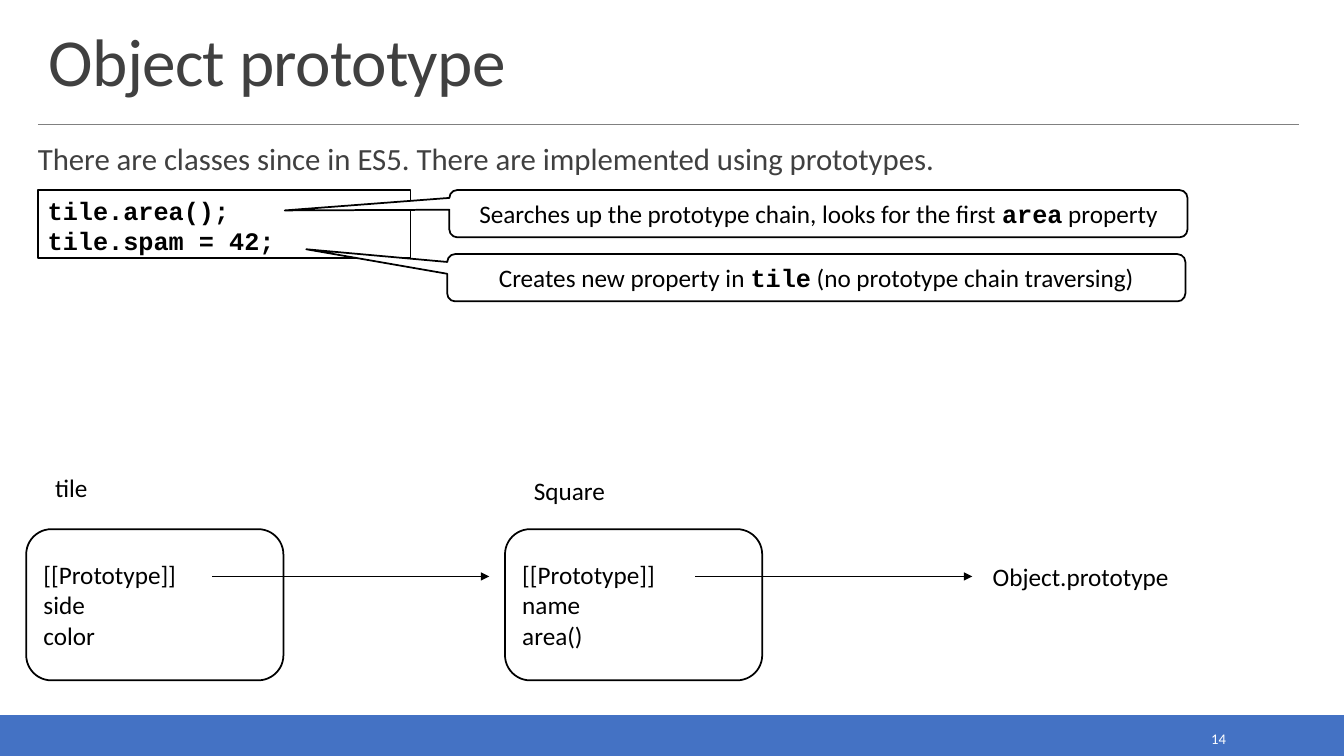
import dataclasses

import pptx
import pptx.dml.color
import pptx.enum.shapes
import pptx.enum.text
import pptx.oxml.ns
import pptx.util
from lxml import etree

PX = 9525  # EMU in one px, 96 px to the inch
SHAPES = pptx.enum.shapes.MSO_SHAPE
ALIGN = pptx.enum.text.PP_ALIGN
ANCHOR = pptx.enum.text.MSO_ANCHOR


@dataclasses.dataclass(frozen=True)
class Theme:
    accent: str = "4472C4"
    rule: str = "808080"
    heading: str = "404040"
    ink: str = "000000"
    paper: str = "FFFFFF"
    font: str = "Calibri"
    code_font: str = "Courier New"
    title_size: float = 48
    body_size: float = 22
    text_size: float = 18
    number_size: float = 10.5
    outline: float = 1.25
    arrow: float = 1
    hairline: float = 0.5


THEME = Theme()


def px(*lengths):
    return [pptx.util.Emu(length * PX) for length in lengths]


def rgb(color):
    return pptx.dml.color.RGBColor.from_string(color)


def write(frame, text, size=THEME.text_size, color=THEME.ink, align=ALIGN.LEFT,
          anchor=ANCHOR.TOP, line_spacing=None, before=None, after=None, tracking=None):
    """Write one paragraph per line of text; `backticks` mark bold code."""
    frame.word_wrap = True
    frame.auto_size = pptx.enum.text.MSO_AUTO_SIZE.NONE
    frame.vertical_anchor = anchor
    for index, line in enumerate(text.split("\n")):
        paragraph = frame.add_paragraph() if index else frame.paragraphs[0]
        paragraph.alignment = align
        paragraph.line_spacing = line_spacing
        if before is not None:
            paragraph.space_before = pptx.util.Pt(before)
        if after is not None:
            paragraph.space_after = pptx.util.Pt(after)
        for position, piece in enumerate(line.split("`")):
            if not piece:
                continue
            is_code = position % 2 == 1
            run = paragraph.add_run()
            run.text = piece
            run.font.name = THEME.code_font if is_code else THEME.font
            run.font.bold = is_code
            run.font.size = pptx.util.Pt(size)
            run.font.color.rgb = rgb(color)
            if tracking is not None:
                run.font._element.set("spc", str(round(tracking * 100)))


def place(placeholder, *box):
    placeholder.left, placeholder.top, placeholder.width, placeholder.height = px(*box)


def add_title(slide, text):
    title = slide.shapes.title
    place(title, 37, 19, 1202, 81)
    write(title.text_frame, text, size=THEME.title_size, color=THEME.heading,
          anchor=ANCHOR.BOTTOM, line_spacing=0.85, tracking=-0.5)


def add_statement(slide, text):
    """Fill the body placeholder with plain text without a bullet."""
    body = slide.placeholders[1]
    place(body, 36, 133, 1202, 45)
    frame = body.text_frame
    frame.margin_left, frame.margin_top, frame.margin_right, frame.margin_bottom = px(0, 4, 0, 4)
    write(frame, text, size=THEME.body_size, color=THEME.heading,
          line_spacing=0.9, before=12, after=2)
    properties = frame.paragraphs[0]._p.get_or_add_pPr()
    properties.set("marL", "0")
    properties.set("indent", "0")
    etree.SubElement(properties, pptx.oxml.ns.qn("a:buNone"))


def add_box(slide, preset, box, fill=THEME.paper, line=THEME.ink, adjustments=()):
    shape = slide.shapes.add_shape(preset, *px(*box))
    shape.shadow.inherit = False
    if fill:
        shape.fill.solid()
        shape.fill.fore_color.rgb = rgb(fill)
    else:
        shape.fill.background()
    shape.line.color.rgb = rgb(line)
    shape.line.width = pptx.util.Pt(THEME.outline)
    for index, value in enumerate(adjustments):
        shape.adjustments[index] = value
    return shape


def add_callout(slide, left, top, pointer, text):
    callout = add_box(slide, SHAPES.ROUNDED_RECTANGULAR_CALLOUT, (left, top, 703, 45),
                      adjustments=(*pointer, 0.167))
    write(callout.text_frame, text, align=ALIGN.CENTER, anchor=ANCHOR.MIDDLE)


def add_label(slide, box, text, **text_format):
    label = slide.shapes.add_textbox(*px(*box))
    write(label.text_frame, text, **text_format)


def add_line(slide, start, end, color, width, arrowhead=False):
    line = slide.shapes.add_connector(pptx.enum.shapes.MSO_CONNECTOR.STRAIGHT, *px(*start, *end))
    line.line.color.rgb = rgb(color)
    line.line.width = pptx.util.Pt(width)
    if arrowhead:
        etree.SubElement(line.line._get_or_add_ln(), pptx.oxml.ns.qn("a:tailEnd"), type="triangle")
    etree.SubElement(line._element.spPr, pptx.oxml.ns.qn("a:effectLst"))


def add_object(slide, left, name, name_top, members):
    """Draw a named object whose prototype arrow leads to the right."""
    holder = add_box(slide, SHAPES.ROUNDED_RECTANGLE, (left, 504, 245, 144))
    write(holder.text_frame, "\n".join(["[[Prototype]]", *members]), anchor=ANCHOR.MIDDLE)
    add_label(slide, (left + 18, name_top, 227, 38), name)


def main():
    deck = pptx.Presentation()
    deck.slide_width, deck.slide_height = px(1280, 720)
    slide = deck.slides.add_slide(deck.slide_layouts[1])

    add_box(slide, SHAPES.RECTANGLE, (0, 682, 1280, 38), fill=THEME.accent, line=THEME.accent)
    add_line(slide, (36, 118), (1237, 118), THEME.rule, THEME.hairline)
    add_title(slide, "Object prototype")
    add_statement(slide, "There are classes since in ES5. There are implemented using prototypes.")
    add_label(slide, (1040, 690, 137, 27), "14", size=THEME.number_size, color=THEME.paper,
              align=ALIGN.RIGHT, anchor=ANCHOR.MIDDLE)

    code = add_box(slide, SHAPES.RECTANGLE, (36, 181, 355, 65), fill=None)
    write(code.text_frame, "`tile.area();`\n`tile.spam = 42;`")
    add_callout(slide, 428, 181, (-0.723, -0.069),
                "Searches up the prototype chain, looks for the first `area` property")
    add_callout(slide, 426, 242, (-0.691, -0.603),
                "Creates new property in `tile` (no prototype chain traversing)")

    add_object(slide, 25, "tile", 445, ["side", "color"])
    add_object(slide, 481, "Square", 448, ["name", "area()"])
    add_label(slide, (936, 530, 259, 38), "Object.prototype")
    for start in (202, 662):
        add_line(slide, (start, 549), (start + 264, 549), THEME.ink, THEME.arrow, arrowhead=True)

    deck.save("out.pptx")


if __name__ == "__main__":
    main()
